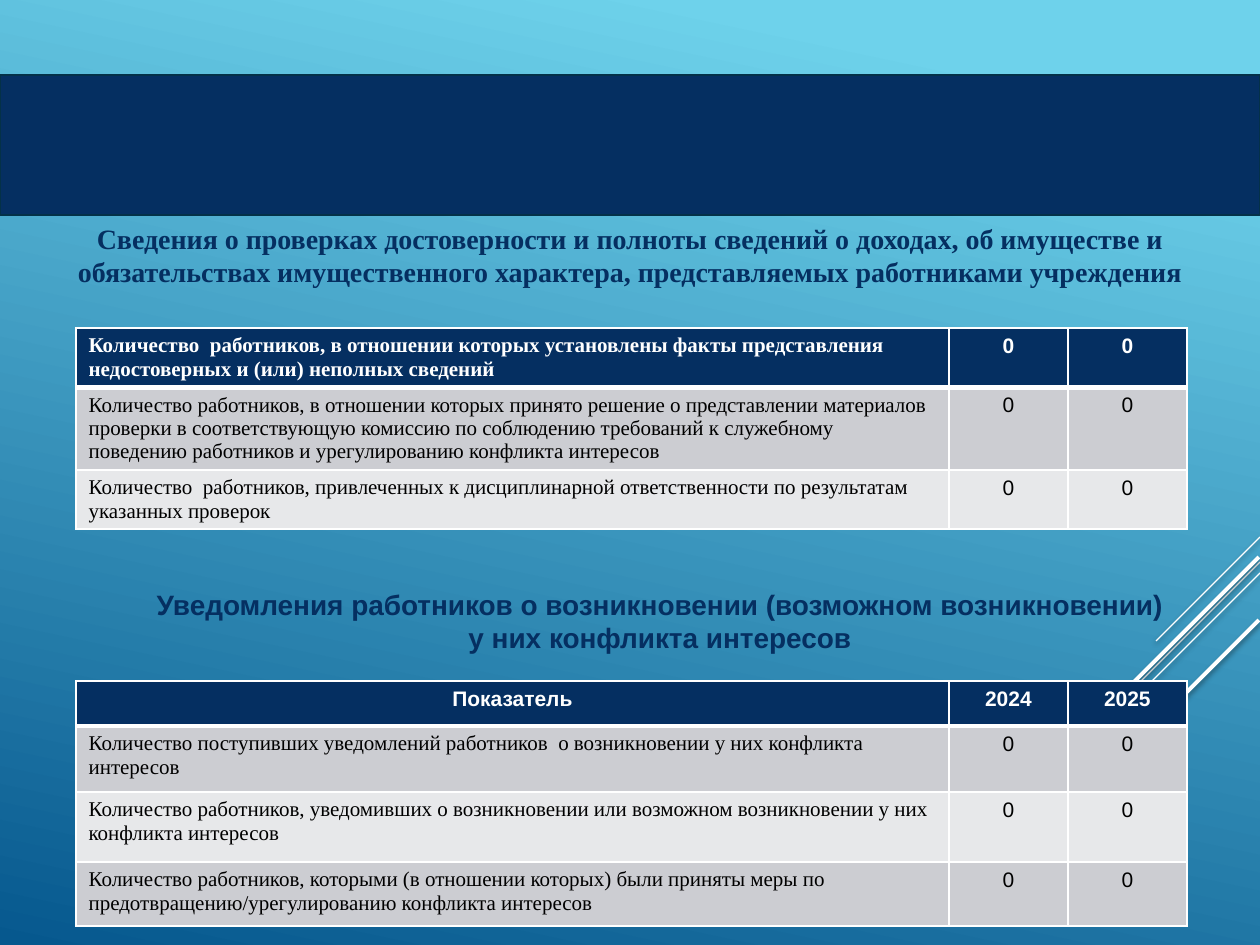
import pptx
import pptx.util
import pptx.dml.color
import pptx.enum.shapes
import pptx.enum.text
import pptx.oxml
import pptx.oxml.ns
from dataclasses import dataclass

HEAD = "Сведения о проверках достоверности и полноты сведений о доходах, об имуществе и обязательствах имущественного характера, представляемых работниками учреждения"
SUBHEAD = "Уведомления работников о возникновении (возможном возникновении) у них конфликта интересов"
CHECKS = [
    ("Количество  работников, в отношении которых установлены факты представления недостоверных и (или) неполных сведений", "0", "0"),
    ("Количество работников, в отношении которых принято решение о представлении материалов проверки в соответствующую комиссию по соблюдению требований к служебному поведению работников и урегулированию конфликта интересов", "0", "0"),
    ("Количество  работников, привлеченных к дисциплинарной ответственности по результатам указанных проверок", "0", "0"),
]
NOTICES = [
    ("Показатель", "2024", "2025"),
    ("Количество поступивших уведомлений работников  о возникновении у них конфликта интересов", "0", "0"),
    ("Количество работников, уведомивших о возникновении или возможном возникновении у них конфликта интересов", "0", "0"),
    ("Количество работников, которыми (в отношении которых) были приняты меры по предотвращению/урегулированию конфликта интересов", "0", "0"),
]
# Diagonal strokes: right end x, y, run to the lower left, width in points
STROKES = [(1260, 537, 104, 0.75), (1260, 562, 341, 0.75), (1260, 573, 217, 0.75),
           (1259, 557, 198, 2.25), (1259, 620, 144, 2.25)]
COLS = (873, 119, 119)


@dataclass
class Theme:
    navy: str = "052F61"
    edge: str = "043148"
    white: str = "FFFFFF"
    black: str = "000000"
    bands: tuple = ("E7E8EA", "CCCDD2")
    sky: tuple = ((0.1, "6ED2EB"), (1, "06588E"))
    serif: str = "Times New Roman"
    sans: str = "Arial"
    head: int = 16
    body: int = 12


THEME = Theme()
SCALE = 914400 / 126
CENTER = pptx.enum.text.PP_ALIGN.CENTER
LEFT = pptx.enum.text.PP_ALIGN.LEFT
TOP = pptx.enum.text.MSO_ANCHOR.TOP
NS = pptx.oxml.ns.nsdecls("a")


def px(num):
    return pptx.util.Emu(round(num * SCALE))


def rgb(code):
    return pptx.dml.color.RGBColor.from_string(code)


def style(par, face, size, color, bold, align):
    par.alignment = align
    font = par.font
    font.name, font.size, font.bold = face, pptx.util.Pt(size), bold
    font.color.rgb = rgb(color)


def paint(slide):
    fill = slide.background.fill
    fill.gradient()
    fill.gradient_angle = 258
    for stop, (pos, color) in zip(fill.gradient_stops, THEME.sky):
        stop.position = pos
        stop.color.rgb = rgb(color)


def stroke(slide, x, y, run, width):
    line = slide.shapes.add_connector(
        pptx.enum.shapes.MSO_CONNECTOR.STRAIGHT, px(x), px(y), px(x - run), px(y + run))
    line.line.color.rgb = rgb(THEME.white)
    line.line.width = pptx.util.Pt(width)
    line._element.spPr.append(pptx.oxml.parse_xml(
        f'<a:effectLst {NS}><a:outerShdw blurRad="39370" dist="20320" dir="5400000">'
        f'<a:srgbClr val="{THEME.black}"><a:alpha val="38000"/></a:srgbClr>'
        '</a:outerShdw></a:effectLst>'))


def banner(slide):
    bar = slide.shapes.add_shape(
        pptx.enum.shapes.MSO_SHAPE.FLOWCHART_PROCESS, 0, px(75), px(1260), px(140))
    bar.shadow.inherit = False
    bar.fill.solid()
    bar.fill.fore_color.rgb = rgb(THEME.navy)
    bar.line.color.rgb = rgb(THEME.edge)
    bar.line.width = pptx.util.Pt(1)


def heading(box, text, face, left, top, width):
    box.left, box.top, box.width, box.height = px(left), px(top), px(width), px(80)
    frame = box.text_frame
    frame.word_wrap = True
    frame.vertical_anchor = TOP
    frame.text = text
    style(frame.paragraphs[0], face, THEME.head, THEME.navy, True, CENTER)


def border(cell, low):
    """Draw white cell edges, with the lower one `low` points wide."""
    props = cell._tc.get_or_add_tcPr()
    for spot, (side, width) in enumerate(zip("LRTB", (1, 1, 1, low))):
        props.insert(spot, pptx.oxml.parse_xml(
            f'<a:ln{side} {NS} w="{width * 12700}"><a:solidFill>'
            f'<a:srgbClr val="{THEME.white}"/></a:solidFill></a:ln{side}>'))


def grid(slide, data, top, rows, height, align):
    """Add a table; `align` is for the first cell of the header row."""
    frame = slide.shapes.add_table(
        len(data), len(COLS), px(76), px(top), px(sum(COLS)), px(height))
    table = frame.table
    table.horz_banding = False
    for col, width in zip(table.columns, COLS):
        col.width = px(width)
    for r, (row, tall) in enumerate(zip(data, rows)):
        table.rows[r].height = px(tall)
        first = r == 0
        for c, text in enumerate(row):
            cell = table.cell(r, c)
            cell.text = text
            cell.fill.solid()
            cell.fill.fore_color.rgb = rgb(THEME.navy if first else THEME.bands[r % 2])
            border(cell, 3 if first else 1)
            place = CENTER if c else align if first else LEFT
            face = THEME.sans if c or place == CENTER else THEME.serif
            style(cell.text_frame.paragraphs[0], face, THEME.body,
                  THEME.white if first else THEME.black, first, place)
    frame.height = px(height)


def main():
    deck = pptx.Presentation()
    deck.slide_width, deck.slide_height = px(1260), px(945)
    slide = deck.slides.add_slide(deck.slide_layouts[5])
    paint(slide)
    for item in STROKES:
        stroke(slide, *item)
    banner(slide)
    heading(slide.shapes.title, HEAD, THEME.serif, 0, 215, 1260)
    grid(slide, CHECKS, 328, (59, 81, 57), 214, LEFT)
    box = slide.shapes.add_textbox(0, 0, 0, 0)
    heading(box, SUBHEAD, THEME.sans, 134, 581, 1052)
    grid(slide, NOTICES, 681, (45, 66, 70, 64), 245, CENTER)
    deck.save("out.pptx")


if __name__ == "__main__":
    main()
